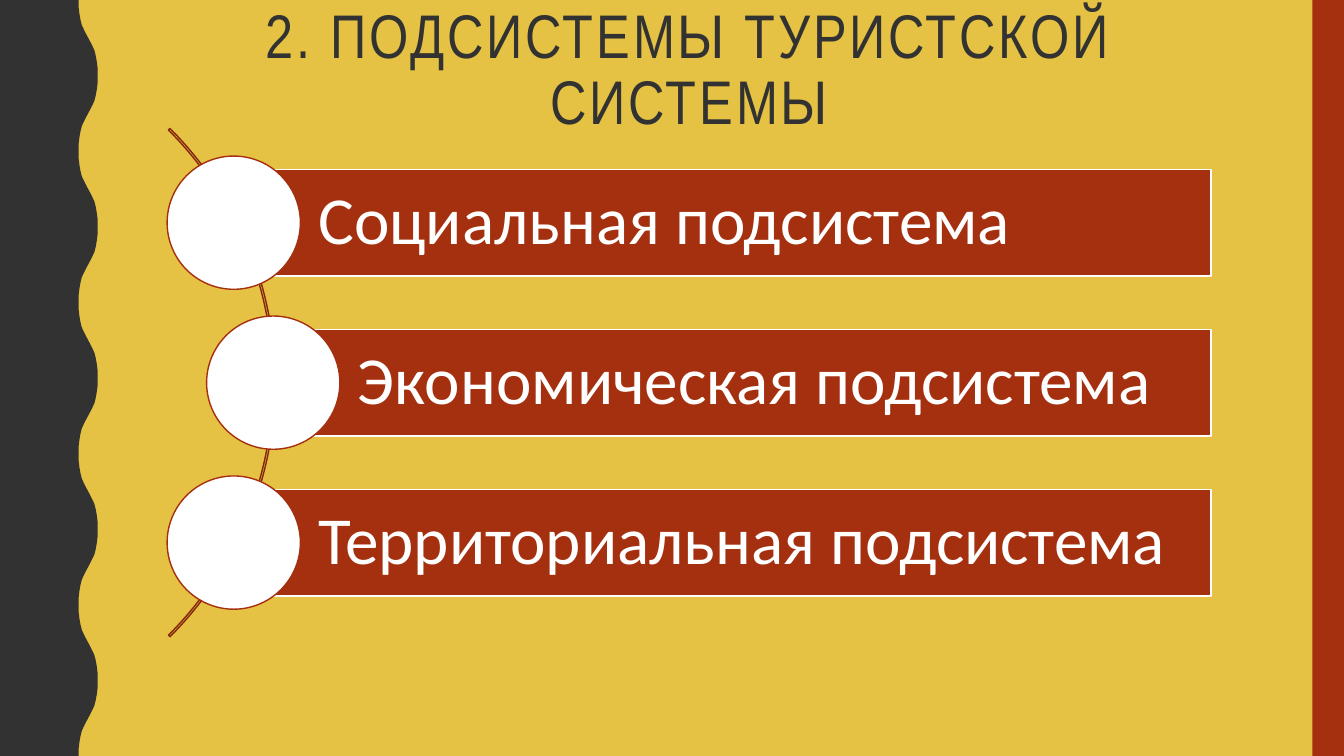
from dataclasses import dataclass

import pptx
import pptx.dml.color
import pptx.enum.shapes
import pptx.enum.text
import pptx.util

Pt = pptx.util.Pt
MSO = pptx.enum.shapes.MSO_SHAPE
ANCHOR = pptx.enum.text.MSO_ANCHOR
ALIGN = pptx.enum.text.PP_ALIGN

WIDTH, HEIGHT = 960, 540
GOLD, DARK, RED, BROWN, WHITE = "E5C243", "323232", "A5300F", "84260C", "FFFFFF"

BAR_RIGHT, BAR_HEIGHT, CIRCLE = 865, 76.2, 95.2
FIRST_CENTER, BAR_STEP = 159.1, 114.25


@dataclass
class Subsystem:
    text: str
    left: float


SUBSYSTEMS = [
    Subsystem("Социальная подсистема", 167),
    Subsystem("Экономическая подсистема", 195.2),
    Subsystem("Территориальная подсистема", 167),
]


def paint(fmt, color: str) -> None:
    """Give a fill a solid colour."""
    fmt.solid()
    fmt.fore_color.rgb = pptx.dml.color.RGBColor.from_string(color)


def style(sp, fill: str | None = None, line: str | None = None) -> None:
    sp.shadow.inherit = False
    if fill:
        paint(sp.fill, fill)
    else:
        sp.fill.background()
    if line:
        paint(sp.line.fill, line)
        sp.line.width = Pt(1)
    else:
        sp.line.fill.background()


def add_shape(s, kind, left: float, top: float, width: float, height: float,
              fill: str | None = None, line: str | None = None):
    sp = s.shapes.add_shape(kind, Pt(left), Pt(top), Pt(width), Pt(height))
    style(sp, fill, line)
    return sp


def write(sp, text: str, *, size: float, font: str, color: str, align=ALIGN.LEFT,
          anchor=ANCHOR.MIDDLE, insets=(7.2, 3.6, 7.2, 3.6), spacing: float = 0) -> None:
    """Insets run left, top, right, bottom; spacing is between letters."""
    tf = sp.text_frame
    tf.word_wrap = True
    tf.auto_size = pptx.enum.text.MSO_AUTO_SIZE.NONE
    tf.vertical_anchor = anchor
    tf.margin_left, tf.margin_top, tf.margin_right, tf.margin_bottom = map(Pt, insets)
    p = tf.paragraphs[0]
    p.alignment = align
    p.line_spacing = 0.9
    r = p.add_run()
    r.text = text
    r.font.size = Pt(size)
    r.font.name = font
    paint(r.font.fill, color)
    if spacing:
        r.font._element.set("spc", str(int(spacing * 100)))


def add_wave(s) -> None:
    """Left band whose edge repeats one wave five times down the slide."""
    waves, period, middle = 5, 108, 63
    quarter = [(56.2, 0), (56.2, 5), (56.8, 10), (57.6, 14.4),
               (58.5, 18), (59.9, 21), (61.4, 24)]
    half = quarter + [(middle, period / 4)]
    half += [(2 * middle - x, period / 2 - y) for x, y in reversed(quarter)]
    wave = half + [(x, period - y) for x, y in reversed(half[:-1])]
    points = [(x, y + k * period) for k in range(waves) for x, y in wave]
    points.append((0, HEIGHT))
    builder = s.shapes.build_freeform(0, 0)
    builder.add_line_segments([(Pt(x), Pt(y)) for x, y in points], close=True)
    style(builder.convert_to_shape(), DARK)


def add_subsystem(s, item: Subsystem, center: float) -> None:
    bar = add_shape(s, MSO.RECTANGLE, item.left, center - BAR_HEIGHT / 2,
                    BAR_RIGHT - item.left, BAR_HEIGHT, RED, WHITE)
    write(bar, item.text, size=48, font="Calibri", color=WHITE,
          insets=(60.5, 9.6, 9.6, 9.6))
    add_shape(s, MSO.OVAL, item.left - CIRCLE / 2, center - CIRCLE / 2,
              CIRCLE, CIRCLE, WHITE, RED)


def main() -> None:
    prs = pptx.Presentation()
    prs.slide_width, prs.slide_height = Pt(WIDTH), Pt(HEIGHT)
    s = prs.slides.add_slide(prs.slide_layouts[5])

    # Background and side bands
    paint(s.background.fill, GOLD)
    add_wave(s)
    add_shape(s, MSO.RECTANGLE, 937.5, 0, WIDTH - 937.5, HEIGHT, RED)

    # Title
    title = s.shapes.title
    title.left, title.top, title.width, title.height = map(Pt, (114.5, 0, 756, 82.8))
    write(title, "2. ПОДСИСТЕМЫ ТУРИСТСКОЙ СИСТЕМЫ", size=44, font="Arial Narrow",
          color=DARK, align=ALIGN.CENTER, anchor=ANCHOR.TOP, spacing=2)

    # Arc behind the list
    arc = add_shape(s, MSO.BLOCK_ARC, -316.8, 16.6, 513.4, 513.4, line=BROWN)
    for i, value in enumerate((189, 27, 0.003)):
        arc.adjustments[i] = value

    # Subsystems
    for i, item in enumerate(SUBSYSTEMS):
        add_subsystem(s, item, FIRST_CENTER + i * BAR_STEP)

    prs.save("out.pptx")


if __name__ == "__main__":
    main()
